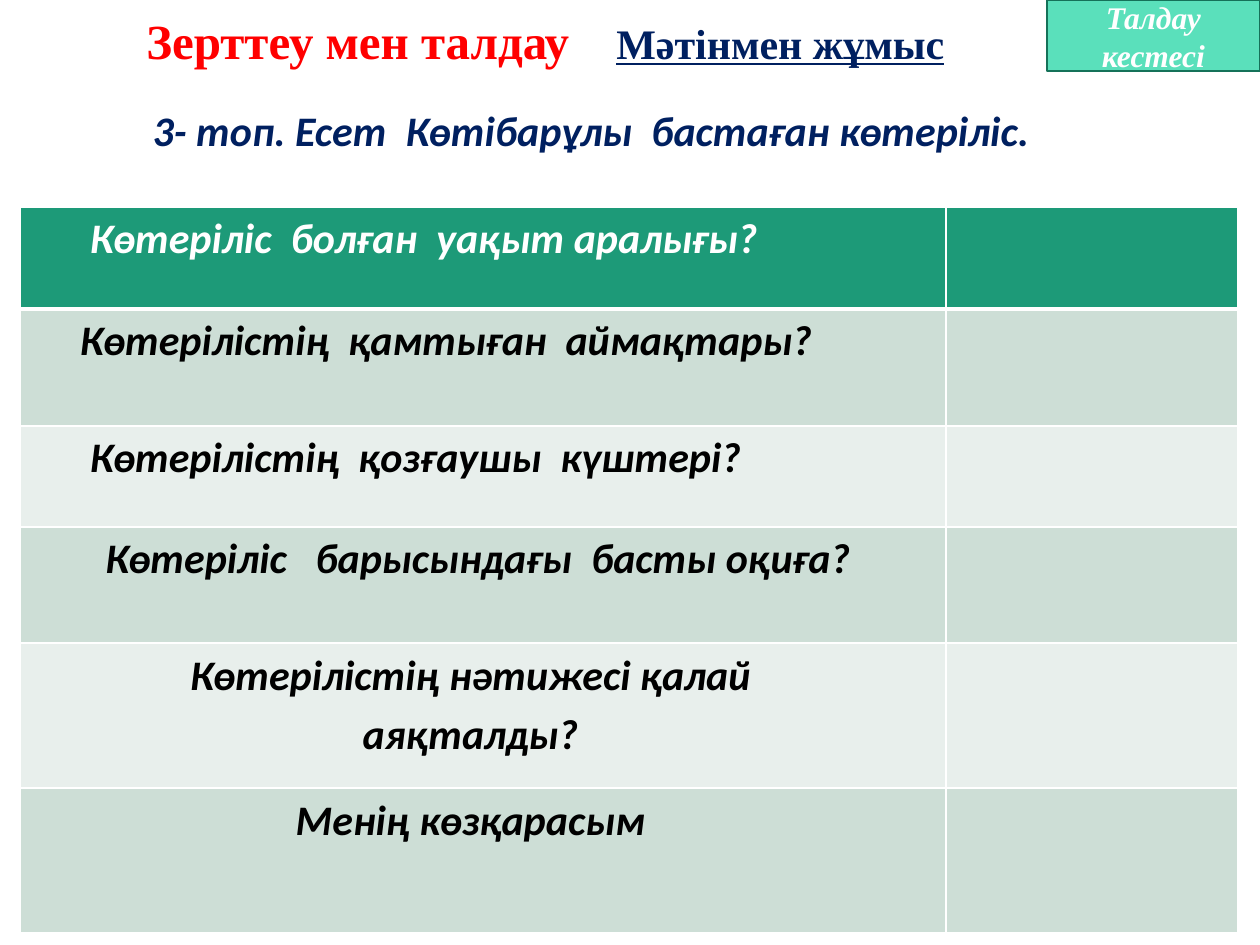
from lxml.etree import SubElement
from pptx import Presentation
from pptx.dml.color import RGBColor as Rgb
from pptx.enum.shapes import MSO_SHAPE as Preset
from pptx.enum.text import MSO_ANCHOR as Anchor, PP_ALIGN as Align
from pptx.oxml.ns import qn
from pptx.util import Pt

PX = 914400 // 126
COLORS = {
    "red": "FF0000", "navy": "002060", "white": "FFFFFF", "black": "000000",
    "mint": "5AE0BB", "edge": "157259", "header": "1D9A78",
    "dark_band": "CDDED6", "light_band": "E8EFEC",
}


def add_span(para, text, color, **formats):
    span = para.add_run()
    span.text = text
    span.font.color.rgb = Rgb.from_string(COLORS[color])
    for name, value in ({"bold": True} | formats).items():
        setattr(span.font, name, value)


def add_border(cell, side, points):
    line = SubElement(cell._tc.get_or_add_tcPr(), qn(f"a:ln{side}"), w=str(Pt(points)))
    fill = SubElement(line, qn("a:solidFill"))
    SubElement(fill, qn("a:srgbClr"), val=COLORS["white"])


deck = Presentation()
deck.slide_width, deck.slide_height = 1260 * PX, 945 * PX
page = deck.slides.add_slide(deck.slide_layouts[6])
serif = {"name": "Times New Roman"}
question_font = {"name": "Calibri", "size": Pt(24), "italic": True}

# Title: two parts on one line, set apart by a tab stop
title = page.shapes.add_textbox(134 * PX, 4 * PX, 1012 * PX, 190 * PX)
title.text_frame.word_wrap = True
para = title.text_frame.paragraphs[0]
stops = SubElement(para._p.get_or_add_pPr(), qn("a:tabLst"))
SubElement(stops, qn("a:tab"), pos=str(470 * PX), algn="l")
add_span(para, "Зерттеу мен талдау\t", "red", size=Pt(28), **serif)
add_span(para, "Мәтінмен жұмыс", "navy", size=Pt(24), underline=True, **serif)

# Subtitle
subtitle = page.shapes.add_textbox(20 * PX, 98 * PX, 1142 * PX, 63 * PX)
subtitle.text_frame.word_wrap = True
para = subtitle.text_frame.paragraphs[0]
para.alignment = Align.CENTER
add_span(para, "3- топ. Есет  Көтібарұлы  бастаған көтеріліс.", "navy", **question_font)

# Corner label
label = page.shapes.add_shape(Preset.RECTANGLE, 1047 * PX, 0, 213 * PX, 71 * PX)
label.shadow.inherit = False
label.fill.solid()
label.fill.fore_color.rgb = Rgb.from_string(COLORS["mint"])
label.line.color.rgb = Rgb.from_string(COLORS["edge"])
label.line.width = Pt(1)
label.text_frame.word_wrap = True
label.text_frame.vertical_anchor = Anchor.MIDDLE
para = label.text_frame.paragraphs[0]
para.alignment = Align.CENTER
add_span(para, "Талдау кестесі", "white", size=Pt(18), italic=True, **serif)

# Question table: text, row height, left margin, right margin, alignment
questions = [
    ("Көтеріліс  болған  уақыт аралығы?", 102, 70, 13, Align.LEFT),
    ("Көтерілістің  қамтыған  аймақтары?", 117, 60, 13, Align.LEFT),
    ("Көтерілістің  қозғаушы  күштері?", 101, 70, 13, Align.LEFT),
    ("Көтеріліс   барысындағы  басты оқиға?", 116, 13, 23, Align.CENTER),
    ("Көтерілістің нәтижесі қалай аяқталды?", 145, 78, 103, Align.CENTER),
    ("Менің көзқарасым", 145, 78, 103, Align.CENTER),
]
height = sum(question[1] for question in questions)
frame = page.shapes.add_table(len(questions), 2, 20 * PX, 207 * PX, 1218 * PX, height * PX)
table = frame.table
for column, width in zip(table.columns, (926, 292)):
    column.width = width * PX

for index, (text, row_height, left, right, align) in enumerate(questions):
    table.rows[index].height = row_height * PX
    band = "header" if index == 0 else ("light_band", "dark_band")[index % 2]
    for cell in table.rows[index].cells:
        for side in "LRTB":
            heavy = (index, side) in ((0, "B"), (1, "T"))
            add_border(cell, side, 3 if heavy else 1)
        cell.fill.solid()
        cell.fill.fore_color.rgb = Rgb.from_string(COLORS[band])
    cell = table.cell(index, 0)
    cell.margin_left, cell.margin_right = left * PX, right * PX
    para = cell.text_frame.paragraphs[0]
    para.alignment = align
    if index >= 4:
        cell.margin_top = cell.margin_bottom = 0
        para.line_spacing = 1.15
        para.space_after = Pt(10)
    add_span(para, text, "white" if index == 0 else "black", **question_font)

deck.save("out.pptx")
